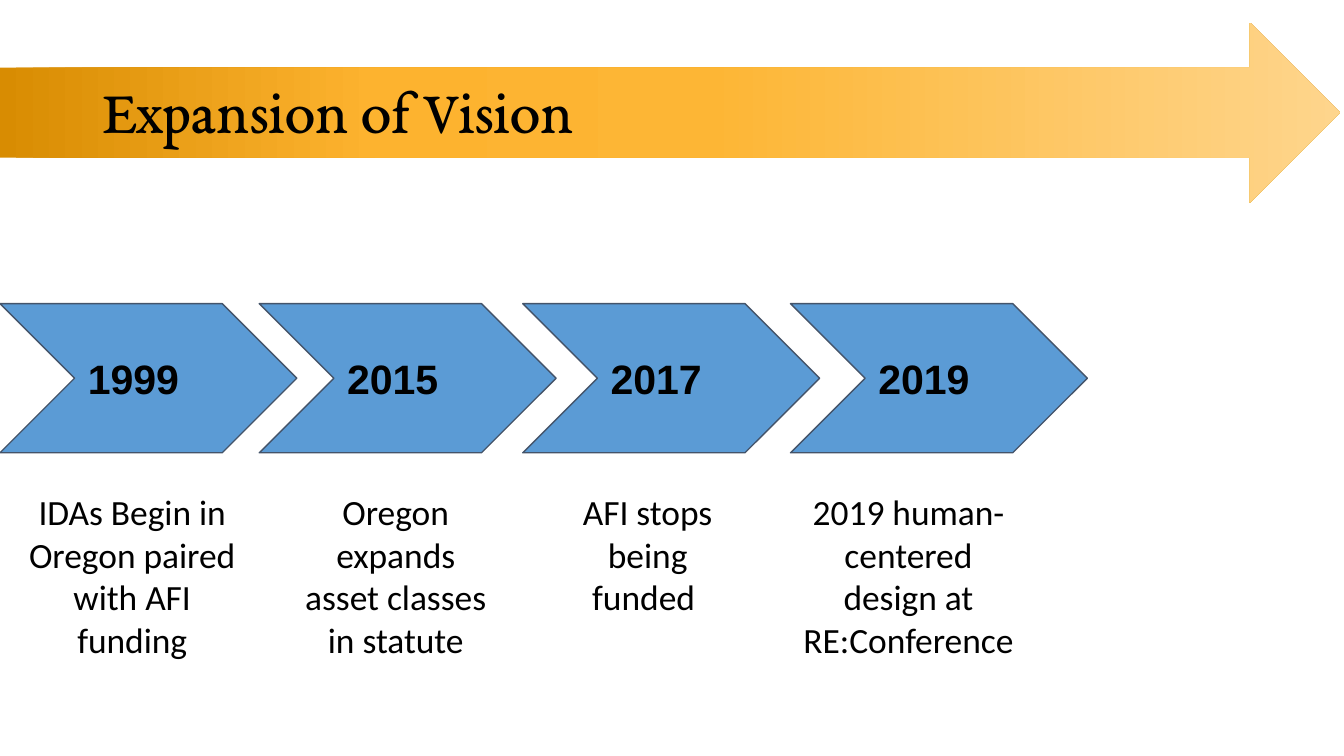
from copy import deepcopy
from pptx import Presentation
from pptx.dml.color import RGBColor
from pptx.enum.dml import MSO_FILL
from pptx.enum.shapes import MSO_SHAPE
from pptx.enum.text import MSO_ANCHOR, MSO_AUTO_SIZE, PP_ALIGN
from pptx.oxml.ns import qn
from pptx.util import Cm, Pt

BLACK = RGBColor(0x00, 0x00, 0x00)
BLUE = RGBColor(0x5B, 0x9B, 0xD5)
SLATE = RGBColor(0x44, 0x54, 0x6A)
GOLDS = [
    (0, RGBColor(0xD8, 0x8C, 0x02)),
    (0.28, RGBColor(0xFD, 0xB3, 0x2F)),
    (0.53, RGBColor(0xFD, 0xB6, 0x35)),
    (1, RGBColor(0xFE, 0xD5, 0x8C)),
]
MILESTONES = [
    ("1999", 0, "IDAs Begin in Oregon paired with AFI funding", 0.25, 4.5, 3.76),
    ("2015", 4.9, "Oregon expands asset classes in statute", 5.36, 4.24, 3.76),
    ("2017", 9.88, "AFI stops being funded ", 10.36, 3.76, 2.95),
    ("2019", 14.94, "2019 human-centered design at RE:Conference", 14.86, 4.62, 3.76),
]


def write(shape, text, font, size, align, anchor, inset_x, inset_y, bold=False):
    tf = shape.text_frame
    tf.word_wrap = True
    tf.vertical_anchor = anchor
    tf.margin_left = tf.margin_right = Cm(inset_x)
    tf.margin_top = tf.margin_bottom = Cm(inset_y)
    p = tf.paragraphs[0]
    p.alignment = align
    r = p.add_run()
    r.text = text
    r.font.name = font
    r.font.size = Pt(size)
    r.font.bold = bold
    r.font.color.rgb = BLACK
    return tf


prs = Presentation()
prs.slide_width = Cm(25.4)
prs.slide_height = Cm(14.29)
s = prs.slides.add_slide(prs.slide_layouts[6])

arrow = s.shapes.add_shape(MSO_SHAPE.RIGHT_ARROW, 0, Cm(0.43), Cm(25.32), Cm(3.4))
arrow.shadow.inherit = False
arrow.line.fill.background()
arrow.fill.gradient()
arrow.fill.gradient_angle = 0
stops = arrow._element.spPr.find(qn("a:gradFill")).find(qn("a:gsLst"))
for stop in list(stops)[:2]:
    stops.append(deepcopy(stop))
for stop, (position, color) in zip(arrow.fill.gradient_stops, GOLDS):
    stop.position = position
    stop.color.rgb = color

title = s.shapes.add_textbox(Cm(1.75), Cm(0.76), Cm(21.89), Cm(2.77))
tf = write(title, "Expansion of Vision", "EB Garamond", 33, PP_ALIGN.LEFT, MSO_ANCHOR.MIDDLE, 0.18, 0.1)
tf.paragraphs[0].line_spacing = 0.9

for year, x, caption, caption_x, caption_w, caption_h in MILESTONES:
    sp = s.shapes.add_shape(MSO_SHAPE.CHEVRON, Cm(x), Cm(5.74), Cm(5.61), Cm(2.82))
    sp.shadow.inherit = False
    sp.fill.solid()
    sp.fill.fore_color.rgb = BLUE
    sp.line.color.rgb = SLATE
    sp.line.width = Pt(0.75)
    write(sp, year, "Arial", 22, PP_ALIGN.LEFT, MSO_ANCHOR.MIDDLE, 0.25, 0.25, True)

    box = s.shapes.add_textbox(Cm(caption_x), Cm(9.02), Cm(caption_w), Cm(caption_h))
    tf = write(box, caption, "Calibri", 19, PP_ALIGN.CENTER, MSO_ANCHOR.TOP, 0.25, 0.25)
    tf.auto_size = MSO_AUTO_SIZE.SHAPE_TO_FIT_TEXT

prs.save("out.pptx")
